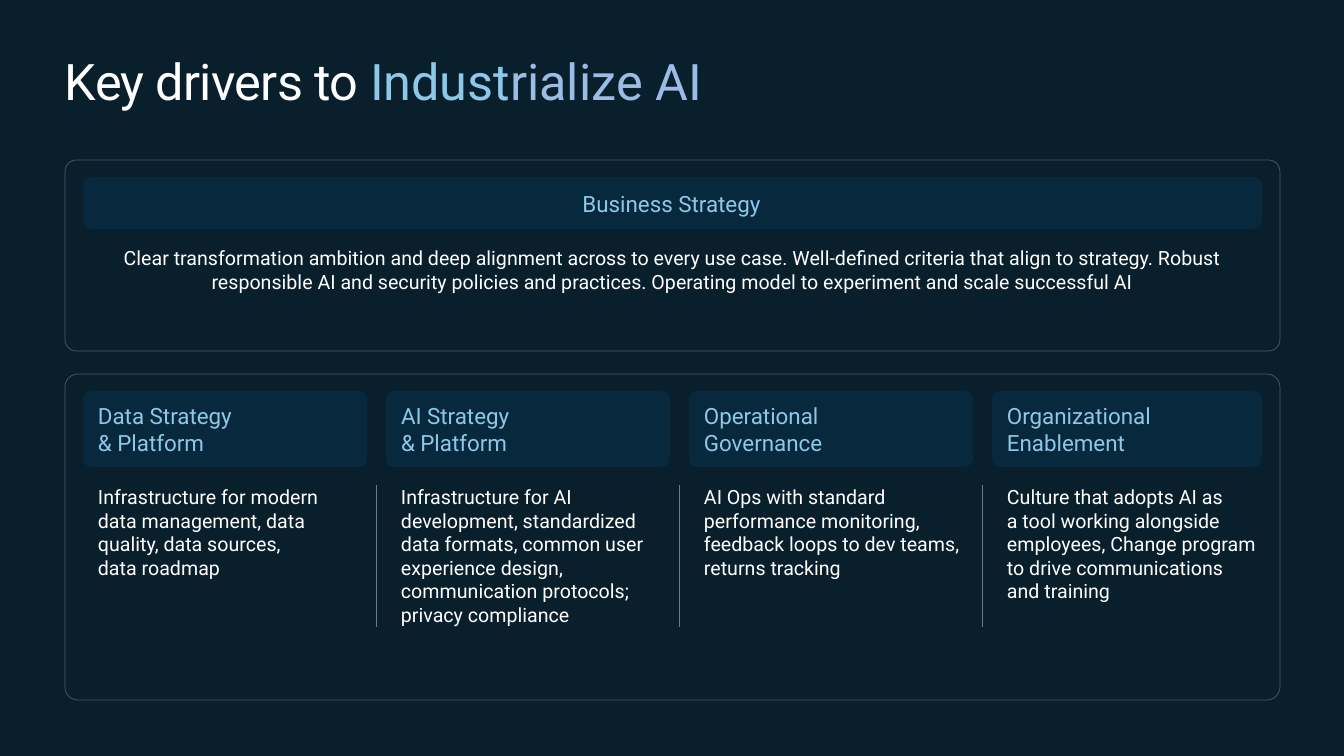
from lxml.etree import SubElement
from pptx import Presentation
from pptx.dml.color import RGBColor
from pptx.enum.shapes import MSO_CONNECTOR, MSO_SHAPE
from pptx.enum.text import MSO_ANCHOR, MSO_AUTO_SIZE, PP_ALIGN
from pptx.oxml.ns import qn
from pptx.util import Emu, Pt

NAVY = RGBColor(0x09, 0x1F, 0x2C)
BLUE = RGBColor(0x00, 0x78, 0xD4)
SKY = RGBColor(0x8D, 0xC8, 0xE8)
LILAC = RGBColor(0x9B, 0xBD, 0xE5)
WHITE = RGBColor(0xFF, 0xFF, 0xFF)
EDGE = RGBColor(0x4B, 0x5A, 0x66)
RULE = RGBColor(0x6B, 0x7B, 0x90)
FONT = "Roboto"

LEFT, STEP, RIGHT = 83, 303, 1262
PILL, GAP = 284, 19

AIM = (
    "Clear transformation ambition and deep alignment across to every use case. "
    "Well-defined criteria that align to strategy. Robust responsible AI and "
    "security policies and practices. Operating model to experiment and scale "
    "successful AI"
)
# Heading, heading width, body
DRIVERS = [
    ("Data Strategy\n& Platform", 139,
     "Infrastructure for modern data management, data quality, data sources,\n"
     "data roadmap"),
    ("AI Strategy\n& Platform", 113,
     "Infrastructure for AI development, standardized data formats, common user "
     "experience design, communication protocols; privacy compliance"),
    ("Operational\nGovernance", 122,
     "AI Ops with standard performance monitoring, feedback loops to dev teams, "
     "returns tracking"),
    ("Organizational\nEnablement", 150,
     "Culture that adopts AI as\na tool working alongside employees, Change "
     "program to drive communications\nand training"),
]


def px(count):
    return Emu(round(count * 914400 / 100.8))


def style(run, size, color):
    run.font.name = FONT
    run.font.size = Pt(size)
    run.font.color.rgb = color


def add_text(slide, box, text, size, color, align=PP_ALIGN.LEFT):
    """Add a text box without margins and return its frame."""
    frame = slide.shapes.add_textbox(*map(px, box)).text_frame
    frame.margin_left = frame.margin_right = 0
    frame.margin_top = frame.margin_bottom = 0
    frame.word_wrap = True
    para = frame.paragraphs[0]
    para.text = text
    para.alignment = align
    for run in para.runs:
        style(run, size, color)
    return frame


def add_label(slide, box, text, align=PP_ALIGN.LEFT):
    frame = add_text(slide, box, text, 16, SKY, align)
    frame.word_wrap = False
    frame.auto_size = MSO_AUTO_SIZE.SHAPE_TO_FIT_TEXT
    frame.vertical_anchor = MSO_ANCHOR.MIDDLE


def add_round(slide, box, bend, color):
    shape = slide.shapes.add_shape(MSO_SHAPE.ROUNDED_RECTANGLE, *map(px, box))
    shape.adjustments[0] = bend
    shape.shadow.inherit = False
    shape.fill.solid()
    shape.fill.fore_color.rgb = color
    return shape


def add_panel(slide, box, bend):
    panel = add_round(slide, box, bend, NAVY)
    panel.line.color.rgb = EDGE
    panel.line.width = Pt(0.5)


def add_pill(slide, box, bend):
    """Add a heading bar whose fill is ten percent opaque."""
    pill = add_round(slide, box, bend, BLUE)
    pill.line.fill.background()
    tint = pill.element.spPr.find(qn("a:solidFill"))[0]
    SubElement(tint, qn("a:alpha"), val="10000")


def add_rule(slide, x, top, base):
    rule = slide.shapes.add_connector(
        MSO_CONNECTOR.STRAIGHT, px(x), px(top), px(x), px(base))
    rule.line.color.rgb = RULE
    rule.line.width = Pt(0.75)
    SubElement(rule.element.spPr, qn("a:effectLst"))


def add_title(slide):
    frame = add_text(slide, (65, 50, 1215, 62), "Key drivers to ", 36, WHITE)
    para = frame.paragraphs[0]
    para.runs[0].font._element.set("spc", "-50")
    for text, color in (("Indust", SKY), ("rialize AI", LILAC)):
        run = para.add_run()
        run.text = text
        style(run, 36, color)


def add_driver(slide, index, head, wide, body):
    left = LEFT + index * STEP
    inner = left + 15
    add_pill(slide, (left, 391, min(PILL, RIGHT - left), 76), 0.11)
    add_label(slide, (inner, 402, wide, 54), head)
    frame = add_text(slide, (inner, 485, 259, 142), body, 14, WHITE)
    frame.paragraphs[0].space_after = Pt(6)
    if index:
        add_rule(slide, left - GAP / 2, 485, 627)


def main():
    deck = Presentation()
    deck.slide_width, deck.slide_height = px(1344), px(756)
    slide = deck.slides.add_slide(deck.slide_layouts[6])
    slide.background.fill.solid()
    slide.background.fill.fore_color.rgb = NAVY

    add_title(slide)
    add_panel(slide, (65, 374, 1215, 326), 0.04)
    add_panel(slide, (65, 160, 1215, 191), 0.06)
    add_pill(slide, (LEFT, 177, RIGHT - LEFT, 52), 0.16)
    add_label(slide, (582, 190, 179, 27), "Business Strategy", PP_ALIGN.CENTER)
    add_text(slide, (LEFT, 246, RIGHT - LEFT, 47), AIM, 14, WHITE,
             PP_ALIGN.CENTER)
    for index, driver in enumerate(DRIVERS):
        add_driver(slide, index, *driver)
    deck.save("out.pptx")


if __name__ == "__main__":
    main()
